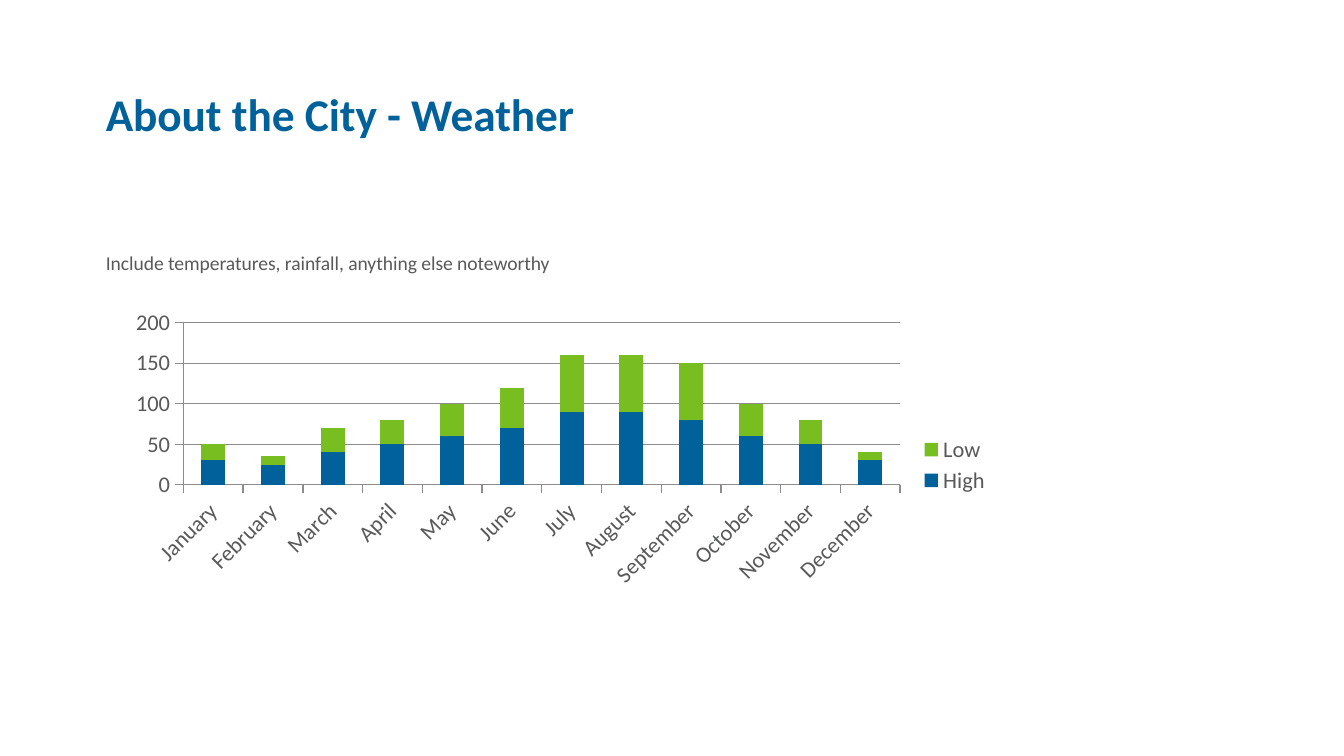
import pptx
import pptx.chart.data
import pptx.dml.color
import pptx.enum.chart
import pptx.enum.text
import pptx.oxml
import pptx.oxml.ns
import pptx.util
from pptx.util import Cm

BLUE, GREEN, GREY, LINE = "00619B", "78BE20", "58595B", "8C8C8C"
MONTHS = ["January", "February", "March", "April", "May", "June", "July",
          "August", "September", "October", "November", "December"]
TEMPS = {
    "High": ([30, 25, 40, 50, 60, 70, 90, 90, 80, 60, 50, 30], BLUE),
    "Low": ([20, 10, 30, 30, 40, 50, 70, 70, 70, 40, 30, 10], GREEN),
}


def tint(code):
    return pptx.dml.color.RGBColor.from_string(code)


def apply(item, values):
    for name, value in values.items():
        setattr(item, name, value)


def layout(box, inner=False):
    target = '<c:layoutTarget val="inner"/>' if inner else ""
    modes = "".join(f'<c:{key}Mode val="edge"/>' for key in "xy")
    sizes = "".join(f'<c:{key} val="{size}"/>' for key, size in zip("xywh", box))
    return pptx.oxml.parse_xml(
        f'<c:layout {pptx.oxml.ns.nsdecls("c")}><c:manualLayout>'
        f"{target}{modes}{sizes}</c:manualLayout></c:layout>")


class Deck:
    face = "Calibri"

    def __init__(self, wide, high):
        self.file = pptx.Presentation()
        apply(self.file, {"slide_width": Cm(wide), "slide_height": Cm(high)})
        self.slide = self.file.slides.add_slide(self.file.slide_layouts[5])

    def font(self, font, size, color, bold=False):
        apply(font, {"name": self.face, "size": pptx.util.Pt(size), "bold": bold})
        font.color.rgb = tint(color)

    def label(self, shape, text, anchor, space, size, color, bold=False):
        frame = shape.text_frame
        apply(frame, {
            "text": text, "word_wrap": True, "vertical_anchor": anchor,
            "auto_size": pptx.enum.text.MSO_AUTO_SIZE.NONE,
            "margin_left": Cm(0.25), "margin_right": Cm(0.25),
            "margin_top": Cm(0.13), "margin_bottom": Cm(0.13)})
        para = frame.paragraphs[0]
        apply(para, {"line_spacing": space, "alignment": pptx.enum.text.PP_ALIGN.LEFT})
        self.font(para.runs[0].font, size, color, bold)

    def title(self, text, left, top, width, height):
        shape = self.slide.shapes.title
        apply(shape, {"left": Cm(left), "top": Cm(top),
                      "width": Cm(width), "height": Cm(height)})
        self.label(shape, text, pptx.enum.text.MSO_ANCHOR.MIDDLE, 0.9, 24.3, BLUE, True)

    def text(self, text, *box):
        shape = self.slide.shapes.add_textbox(*map(Cm, box))
        self.label(shape, text, pptx.enum.text.MSO_ANCHOR.TOP, 1.5, 10.5, GREY)

    def chart(self, names, series, *box):
        data = pptx.chart.data.CategoryChartData()
        data.categories = names
        for name, (values, _) in series.items():
            data.add_series(name, values)
        kind = pptx.enum.chart.XL_CHART_TYPE.COLUMN_STACKED
        chart = self.slide.shapes.add_chart(kind, *map(Cm, box), data).chart
        apply(chart, {"has_title": False, "has_legend": True})
        self.font(chart.font, 12, GREY)
        plot = chart.plots[0]
        apply(plot, {"gap_width": 150, "overlap": 100, "vary_by_categories": False})
        for bar, (_, color) in zip(plot.series, series.values()):
            bar.format.fill.solid()
            bar.format.fill.fore_color.rgb = tint(color)
        self.axes(chart)
        self.place(chart)

    def axes(self, chart):
        months, scale = chart.category_axis, chart.value_axis
        apply(scale, {"minimum_scale": 0, "maximum_scale": 200,
                      "major_unit": 50, "has_major_gridlines": True})
        for axis in (months, scale):
            axis.major_tick_mark = pptx.enum.chart.XL_TICK_MARK.OUTSIDE
            self.font(axis.tick_labels.font, 12, GREY)
        for part in (months, scale, scale.major_gridlines):
            apply(part.format.line, {"width": pptx.util.Pt(0.75)})
            part.format.line.color.rgb = tint(LINE)
        months._element.txPr.bodyPr.set("rot", "-2700000")

    def place(self, chart):
        legend = chart.legend
        apply(legend, {"position": pptx.enum.chart.XL_LEGEND_POSITION.RIGHT,
                       "include_in_layout": False})
        self.font(legend.font, 12, GREY)
        area = chart._chartSpace.chart.plotArea
        key = legend._element
        for part in (area, key):
            for old in part.findall(pptx.oxml.ns.qn("c:layout")):
                part.remove(old)
        area.insert(0, layout((0.1, 0.07, 0.79, 0.49), True))
        key.insert(1, layout((0.9, 0.4, 0.1, 0.2)))


def main():
    deck = Deck(25.4, 14.28)
    deck.title("About the City - Weather", 1.75, 1.63, 12.4, 1.17)
    deck.text("Include temperatures, rainfall, anything else noteworthy",
              1.75, 4.39, 12.4, 0.84)
    deck.chart(MONTHS, TEMPS, 1.75, 5.66, 17.15, 6.25)
    deck.file.save("out.pptx")


if __name__ == "__main__":
    main()
